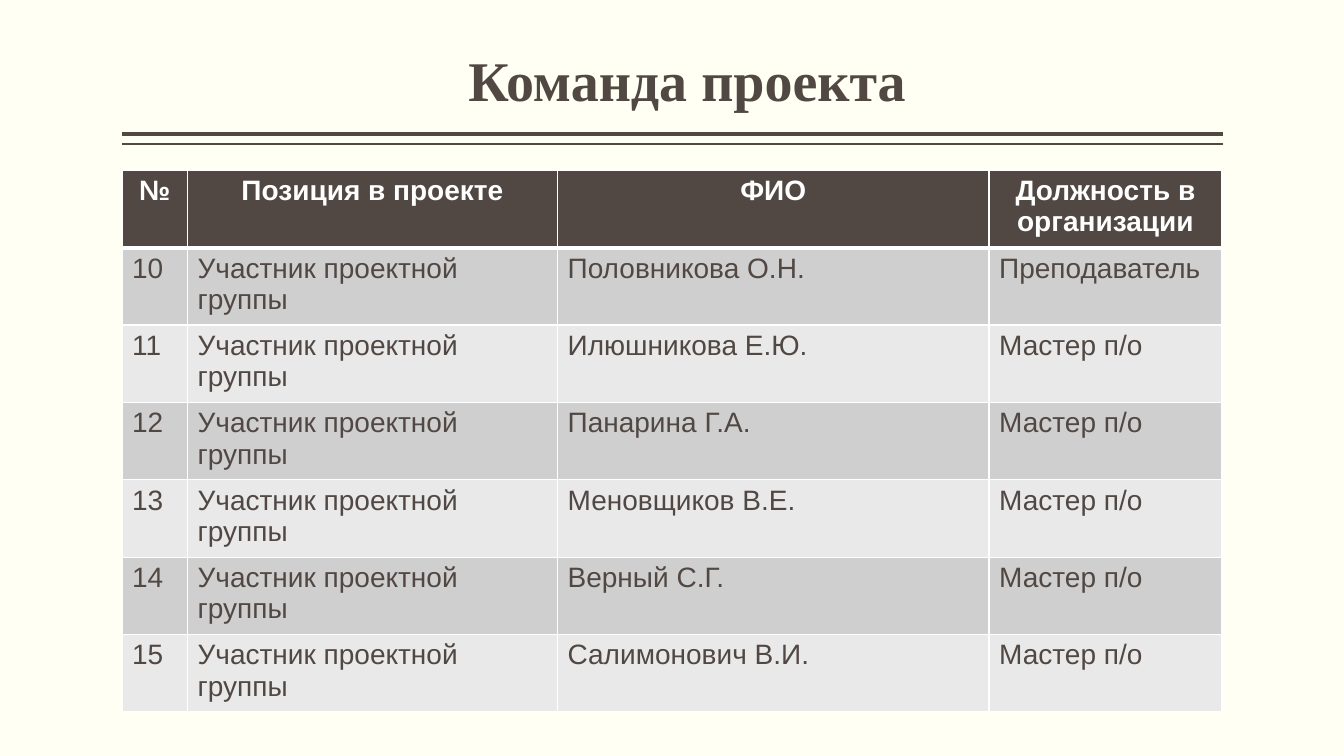
from pptx import Presentation
from pptx.dml.color import RGBColor
from pptx.enum.shapes import MSO_CONNECTOR
from pptx.enum.text import MSO_ANCHOR, PP_ALIGN
from pptx.oxml import parse_xml
from pptx.oxml.ns import nsdecls
from pptx.util import Inches, Pt

CREAM = RGBColor(0xFF, 0xFF, 0xF3)
BROWN = RGBColor(0x51, 0x48, 0x43)
WHITE = RGBColor(0xFF, 0xFF, 0xFF)
DARK = RGBColor(0xD0, 0xCF, 0xCF)
LIGHT = RGBColor(0xE9, 0xE9, 0xE9)

LEFT, RIGHT = Inches(1.21), Inches(12.13)
COLS = [0.65, 3.67, 4.28, 2.31]
ROW = 0.72
HEAD = ["№", "Позиция в проекте", "ФИО", "Должность в организации"]
TEAM = [
    ("Половникова О.Н.", "Преподаватель"),
    ("Илюшникова Е.Ю.", "Мастер п/о"),
    ("Панарина Г.А.", "Мастер п/о"),
    ("Меновщиков В.Е.", "Мастер п/о"),
    ("Верный С.Г.", "Мастер п/о"),
    ("Салимонович В.И.", "Мастер п/о"),
]


def add_run(para, text, face, size, color, bold):
    run = para.add_run()
    run.text = text
    font = run.font
    font.name, font.size, font.bold = face, Pt(size), bold
    font.color.rgb = color


def add_edge(cell, side, width):
    cell._tc.get_or_add_tcPr().append(parse_xml(
        f'<a:{side} {nsdecls("a")} w="{Pt(width)}"><a:solidFill>'
        f'<a:srgbClr val="{WHITE}"/></a:solidFill></a:{side}>'))


deck = Presentation()
deck.slide_width, deck.slide_height = Inches(13.33), Inches(7.5)
slide = deck.slides.add_slide(deck.slide_layouts[6])
back = slide.background.fill
back.solid()
back.fore_color.rgb = CREAM

for y, width in [(1.33, 3), (1.43, 1)]:
    rule = slide.shapes.add_connector(
        MSO_CONNECTOR.STRAIGHT, RIGHT, Inches(y), LEFT, Inches(y))
    rule.line.color.rgb = BROWN
    rule.line.width = Pt(width)
    rule._element.spPr.append(parse_xml(f'<a:effectLst {nsdecls("a")}/>'))

title = slide.shapes.add_textbox(
    Inches(1.36), Inches(0.21), Inches(10.91), Inches(0.97))
frame = title.text_frame
frame.word_wrap = True
frame.vertical_anchor = MSO_ANCHOR.BOTTOM
frame.margin_left = frame.margin_right = 0
para = frame.paragraphs[0]
para.alignment = PP_ALIGN.CENTER
para.line_spacing = 0.9
add_run(para, "Команда проекта", "Times New Roman", 40, BROWN, True)

rows = [HEAD]
for num, (name, job) in enumerate(TEAM, 10):
    rows.append([str(num), "Участник проектной группы", name, job])

table = slide.shapes.add_table(
    len(rows), len(COLS), LEFT, Inches(1.69),
    Inches(sum(COLS)), Inches(ROW * len(rows))).table
for col, width in zip(table.columns, COLS):
    col.width = Inches(width)

for r, row in enumerate(rows):
    table.rows[r].height = Inches(ROW)
    top = r == 0
    for c, text in enumerate(row):
        cell = table.cell(r, c)
        for side in ("lnL", "lnR", "lnT", "lnB"):
            thick = (top and side == "lnB") or (r == 1 and side == "lnT")
            add_edge(cell, side, 3 if thick else 1)
        cell.fill.solid()
        cell.fill.fore_color.rgb = BROWN if top else DARK if r % 2 else LIGHT
        para = cell.text_frame.paragraphs[0]
        para.alignment = PP_ALIGN.CENTER if top else PP_ALIGN.LEFT
        add_run(para, text, "Arial", 20, WHITE if top else BROWN, top)

deck.save("out.pptx")
